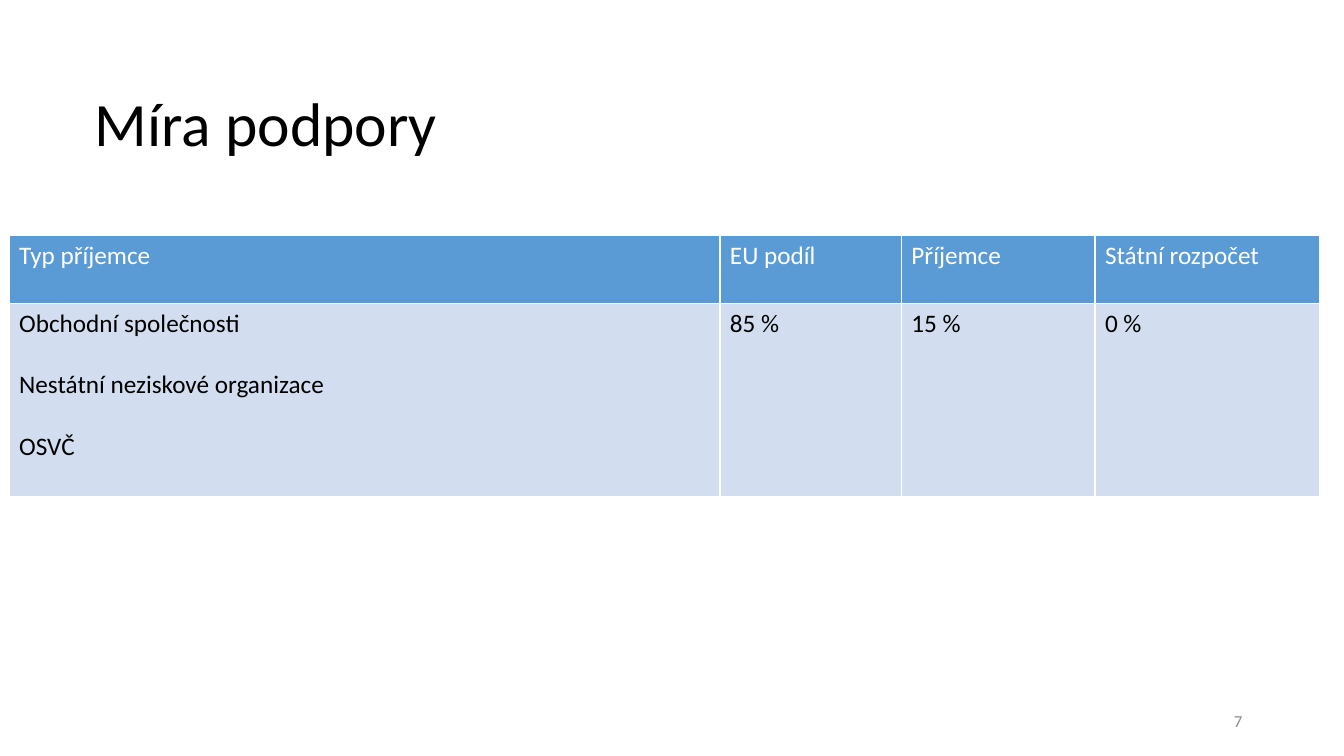
from lxml.etree import SubElement
from pptx import Presentation
from pptx.dml.color import RGBColor
from pptx.enum.text import MSO_ANCHOR as Anchor, PP_ALIGN as Align
from pptx.oxml.ns import qn
from pptx.util import Inches, Pt

FONT = "Calibri"
WHITE, BLACK, GREY = "FFFFFF", "000000", "8C8C8C"
HEADER_BLUE, ROW_BLUE = "5B9BD5", "D2DEEF"
COLUMN_WIDTHS = [7.05, 1.8, 1.92, 2.23]
ROW_HEIGHTS = [0.67, 1.92]
SUPPORT_RATES = [
    ["Typ příjemce", "EU podíl", "Příjemce", "Státní rozpočet"],
    ["Obchodní společnosti\nNestátní neziskové organizace\nOSVČ", "85 %", "15 %", "0 %"],
]


def rgb(value):
    return RGBColor.from_string(value)


def place(shape, left, top, width, height):
    shape.left, shape.top = Inches(left), Inches(top)
    shape.width, shape.height = Inches(width), Inches(height)


def write(frame, text, size, color, align=Align.LEFT, gap=0):
    frame.text = text
    for index, paragraph in enumerate(frame.paragraphs):
        paragraph.alignment = align
        paragraph.space_before = Pt(gap if index else 0)
        font = paragraph.font
        font.name, font.size, font.bold = FONT, Pt(size), False
        font.color.rgb = rgb(color)


def add_title(slide, text):
    title = slide.shapes.title
    place(title, 0.84, 0.78, 11.5, 0.96)
    write(title.text_frame, text, 44, BLACK)
    title.text_frame.vertical_anchor = Anchor.MIDDLE
    title.text_frame.paragraphs[0].line_spacing = 0.9


def set_borders(cell, color, width):
    properties = cell._tc.get_or_add_tcPr()
    for side in ("a:lnL", "a:lnR", "a:lnT", "a:lnB"):
        line = SubElement(properties, qn(side), w=str(Pt(width)))
        fill = SubElement(line, qn("a:solidFill"))
        SubElement(fill, qn("a:srgbClr"), val=color)


def add_rates_table(slide):
    table = slide.shapes.add_table(
        len(ROW_HEIGHTS), len(COLUMN_WIDTHS), Inches(0.09), Inches(2.34),
        Inches(sum(COLUMN_WIDTHS)), Inches(sum(ROW_HEIGHTS))).table
    table.horz_banding = False
    for column, width in zip(table.columns, COLUMN_WIDTHS):
        column.width = Inches(width)
    styles = [(HEADER_BLUE, WHITE), (ROW_BLUE, BLACK)]
    for row, height, texts, (fill, color) in zip(
            table.rows, ROW_HEIGHTS, SUPPORT_RATES, styles):
        row.height = Inches(height)
        for cell, text in zip(row.cells, texts):
            write(cell.text_frame, text, 18, color, gap=22)
            set_borders(cell, WHITE, 1)
            cell.fill.solid()
            cell.fill.fore_color.rgb = rgb(fill)


def add_page_number(slide, number):
    frame = slide.shapes.add_textbox(
        Inches(9.42), Inches(6.95), Inches(3), Inches(0.4)).text_frame
    frame.word_wrap = True
    frame.vertical_anchor = Anchor.MIDDLE
    write(frame, number, 12, GREY, Align.RIGHT)


def main():
    deck = Presentation()
    deck.slide_width, deck.slide_height = Inches(13.33), Inches(7.5)
    slide = deck.slides.add_slide(deck.slide_layouts.get_by_name("Title Only"))
    add_title(slide, "Míra podpory")
    add_rates_table(slide)
    add_page_number(slide, "7")
    deck.save("out.pptx")


if __name__ == "__main__":
    main()
